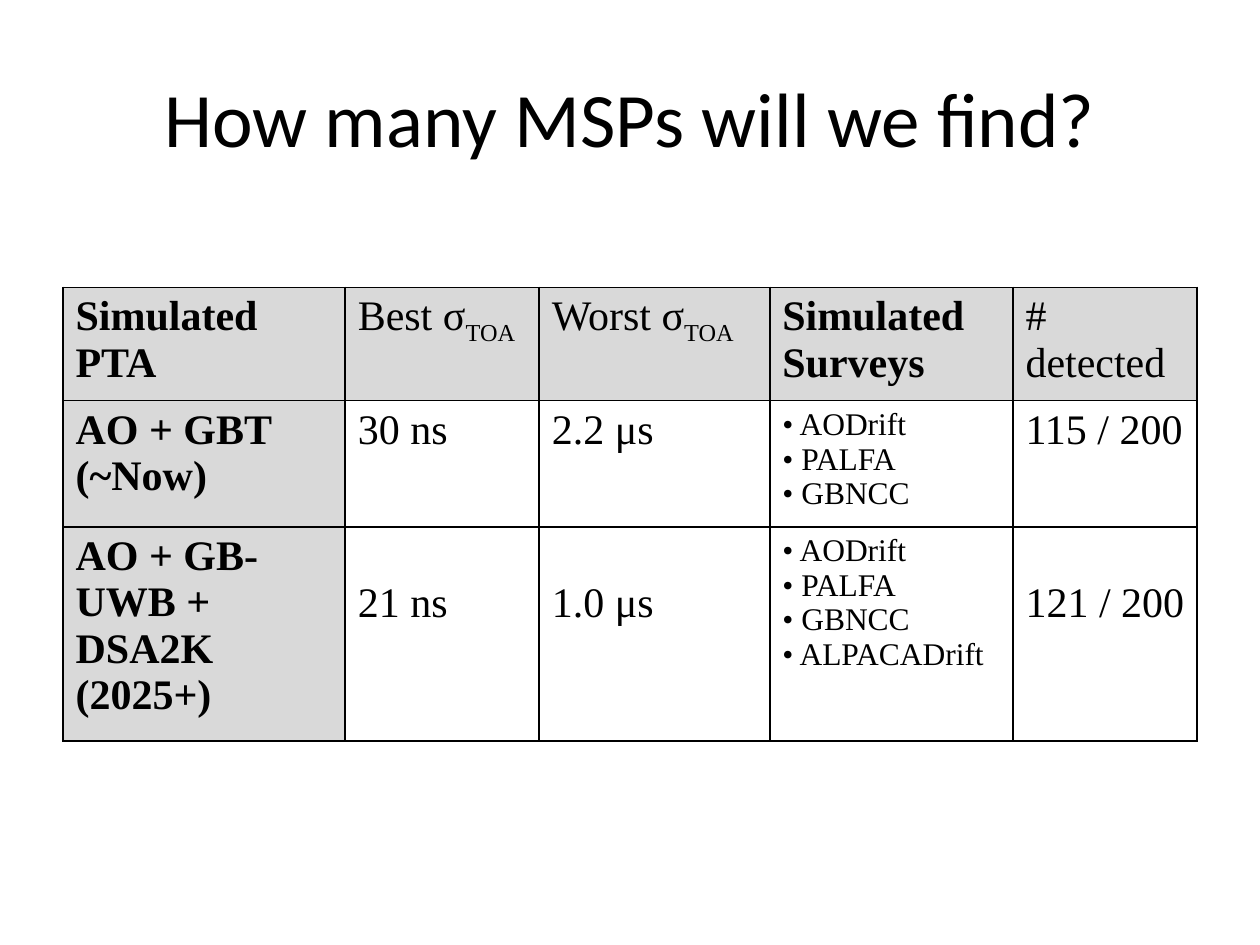
"""Build a slide with a table of simulated pulsar timing arrays and detected MSPs."""
from lxml.etree import SubElement
from pptx import Presentation
from pptx.dml.color import RGBColor
from pptx.enum.text import MSO_ANCHOR, PP_ALIGN
from pptx.oxml.ns import qn
from pptx.util import Inches, Pt

COLORS = {"ink": "000000", "shade": "D9D9D9"}
COLUMN_WIDTHS = [2.24, 1.54, 1.83, 1.93, 1.46]
ROW_HEIGHTS = [0.84, 0.93, 1.58]
SURVEY_COLUMN = 3
SURVEYS = ["• AODrift", "• PALFA", "• GBNCC"]
ROWS = [
    [["Simulated PTA"], ["Best σ_TOA"], ["Worst σ_TOA"], ["Simulated", "Surveys"], ["# detected"]],
    [["AO + GBT", "(~Now)"], ["30 ns"], ["2.2 μs"], SURVEYS, ["115 / 200"]],
    [["AO + GB-UWB + DSA2K", "(2025+)"], ["21 ns"], ["1.0 μs"],
     SURVEYS + ["• ALPACADrift"], ["121 / 200"]],
]


def style_font(para, name, size, bold=False):
    para.font.name = name
    para.font.size = Pt(size)
    para.font.bold = bold
    para.font.color.rgb = RGBColor.from_string(COLORS["ink"])


def add_borders(cell):
    properties = cell._tc.get_or_add_tcPr()
    for side in ("a:lnL", "a:lnR", "a:lnT", "a:lnB"):
        line = SubElement(properties, qn(side), w=str(Pt(1)))
        fill = SubElement(line, qn("a:solidFill"))
        SubElement(fill, qn("a:srgbClr"), val=COLORS["ink"])


deck = Presentation()
deck.slide_width = Inches(10)
deck.slide_height = Inches(7.5)
page = deck.slides.add_slide(deck.slide_layouts[6])

title = page.shapes.add_textbox(Inches(0.5), Inches(0.3), Inches(9), Inches(1.25))
title.text_frame.word_wrap = True
title.text_frame.vertical_anchor = MSO_ANCHOR.MIDDLE
title_para = title.text_frame.paragraphs[0]
title_para.text = "How many MSPs will we find?"
title_para.alignment = PP_ALIGN.CENTER
style_font(title_para, "Calibri", 44)

table = page.shapes.add_table(
    len(ROWS), len(COLUMN_WIDTHS), Inches(0.5), Inches(2.28), Inches(9), Inches(sum(ROW_HEIGHTS))
).table
table.horz_banding = False
for column, width in zip(table.columns, COLUMN_WIDTHS):
    column.width = Inches(width)
for row, height in zip(table.rows, ROW_HEIGHTS):
    row.height = Inches(height)

for row_index, row_lines in enumerate(ROWS):
    for column_index, lines in enumerate(row_lines):
        cell = table.cell(row_index, column_index)
        is_header = row_index == 0
        is_survey = column_index == SURVEY_COLUMN
        add_borders(cell)
        if is_header or column_index == 0:
            cell.fill.solid()
            cell.fill.fore_color.rgb = RGBColor.from_string(COLORS["shade"])
        else:
            cell.fill.background()
        if row_index == 2 and column_index != 0 and not is_survey:
            cell.margin_top = Inches(0.42)
        cell.text = "\n".join(lines)
        size = 18 if is_survey and not is_header else 24
        bold = column_index == 0 or (is_header and is_survey)
        for para, line in zip(cell.text_frame.paragraphs, lines):
            style_font(para, "Times New Roman", size, bold)
            base, _, subscript = line.partition("_")
            para.runs[0].text = base
            if subscript:
                span = para.add_run()
                span.text = subscript
                span._r.get_or_add_rPr().set("baseline", "-25000")

deck.save("out.pptx")
